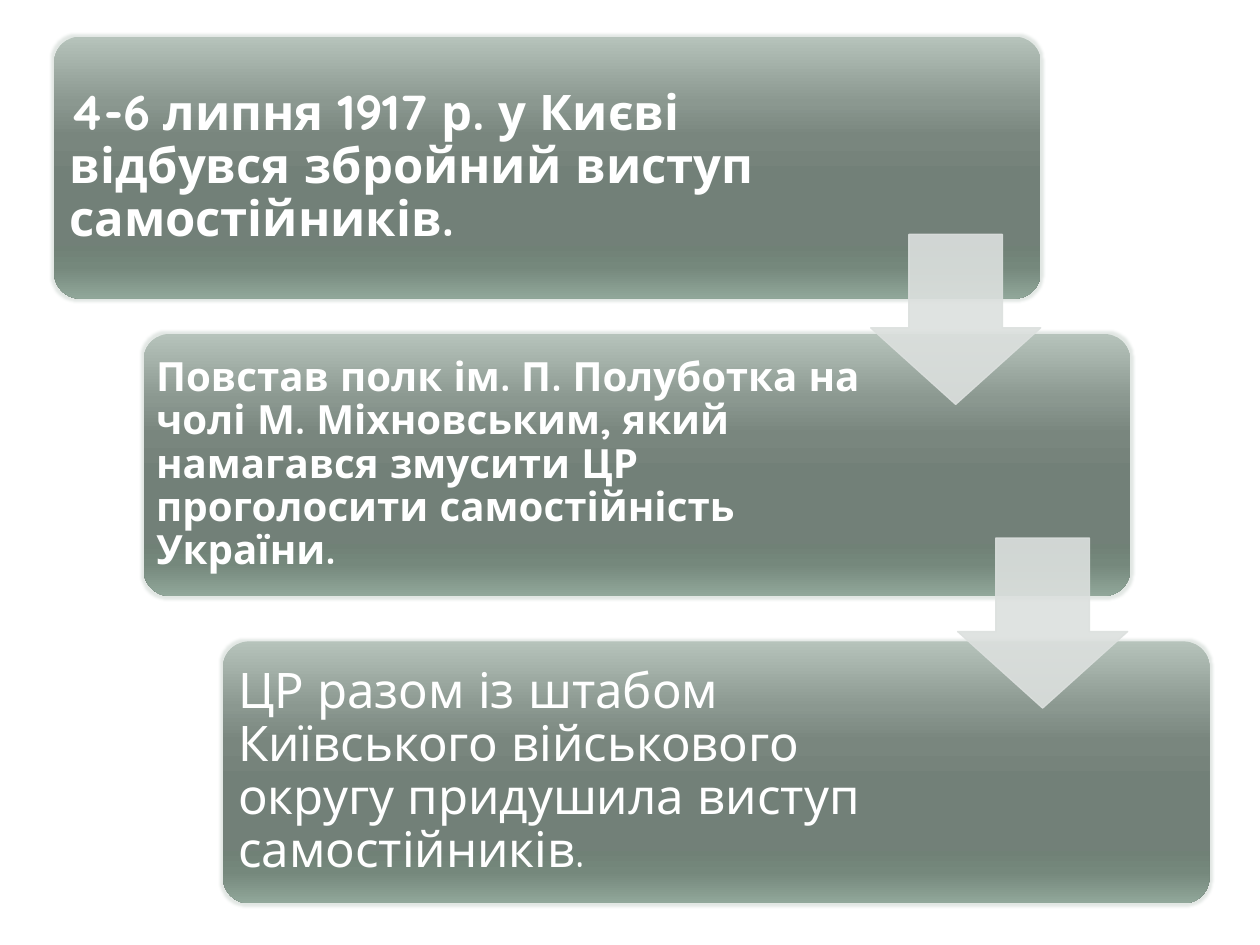
from lxml import etree
from pptx import Presentation
from pptx.dml.color import RGBColor
from pptx.enum.shapes import MSO_SHAPE
from pptx.enum.text import MSO_ANCHOR
from pptx.oxml.ns import qn
from pptx.util import Inches, Pt

ROUND, DOWN = MSO_SHAPE.ROUNDED_RECTANGLE, MSO_SHAPE.DOWN_ARROW
MIDDLE = MSO_ANCHOR.MIDDLE
FONT = "Quicksand"
COLORS = {"text": "FFFFFF", "arrow": "DCE0DE", "glow": "B6C3BB"}
STOPS = {0: "B6C3BB", 25: "8B9890", 38: "79867E", 55: "728078",
         80: "708176", 88: "75887C", 100: "91A79A"}
CARD_W, CARD_H = 7.83, 2.08
ARROW = 1.35

# left, top, text width, inset, size, bold, text
STEPS = [
    (0.43, 0.29, 5.71, 0.12, 28, True,
     "4-6 липня 1917 р. у Києві відбувся збройний виступ самостійників."),
    (1.14, 2.65, 5.79, 0.1, 23, True,
     "Повстав полк ім. П. Полуботка на чолі М. Міхновським, який "
     "намагався змусити ЦР проголосити самостійність України."),
    (1.77, 5.09, 5.79, 0.12, 28, False,
     "ЦР разом із штабом Київського військового округу придушила "
     "виступ самостійників."),
]
ARROWS = [(6.91, 1.86), (7.6, 4.27)]


def add_node(parent, tag, **attrs):
    node = etree.SubElement(parent, qn(tag))
    for key, value in attrs.items():
        node.set(key, str(value))
    return node


def add_color(parent, color, alpha=100):
    node = add_node(parent, "a:srgbClr", val=color)
    if alpha < 100:
        add_node(node, "a:alpha", val=alpha * 1000)


def add_form(slide, kind, left, top, width, height, adjust):
    form = slide.shapes.add_shape(
        kind, Inches(left), Inches(top), Inches(width), Inches(height))
    form.shadow.inherit = False
    for i, value in enumerate(adjust):
        form.adjustments[i] = value
    return form


def add_card(slide, left, top):
    """Rounded panel with a vertical gradient and a faint glow."""
    card = add_form(slide, ROUND, left, top, CARD_W, CARD_H, [0.1])
    card.line.fill.background()
    card.fill.gradient()
    card.fill.gradient_angle = 270
    props = card._element.spPr
    stops = props.find(".//" + qn("a:gsLst"))
    for old in list(stops):
        stops.remove(old)
    for pos, color in STOPS.items():
        add_color(add_node(stops, "a:gs", pos=pos * 1000), color)
    glow = add_node(props.find(qn("a:effectLst")), "a:glow", rad=Pt(3))
    add_color(glow, COLORS["glow"], 40)


def add_text(slide, text, left, top, width, height, inset, size, bold):
    box = slide.shapes.add_textbox(
        Inches(left), Inches(top), Inches(width), Inches(height))
    frame = box.text_frame
    frame.word_wrap = True
    frame.vertical_anchor = MIDDLE
    frame.margin_left = frame.margin_right = Inches(inset)
    frame.margin_top = frame.margin_bottom = Inches(inset)
    para = frame.paragraphs[0]
    para.line_spacing = 0.9
    run = para.add_run()
    run.text = text
    run.font.name = FONT
    run.font.size = Pt(size)
    run.font.bold = bold
    run.font.color.rgb = RGBColor.from_string(COLORS["text"])


def add_arrow(slide, left, top):
    arrow = add_form(slide, DOWN, left, top, ARROW, ARROW, [0.55, 0.45])
    arrow.line.width = Pt(0.75)
    for fill in (arrow.fill, arrow.line.fill):
        fill.solid()
        fill.fore_color.rgb = RGBColor.from_string(COLORS["arrow"])
    for color in arrow._element.spPr.iter(qn("a:srgbClr")):
        add_node(color, "a:alpha", val=90000)


def main():
    deck = Presentation()
    deck.slide_width, deck.slide_height = Inches(10), Inches(7.5)
    slide = deck.slides.add_slide(deck.slide_layouts[6])
    for left, top, width, inset, size, bold, text in STEPS:
        add_card(slide, left, top)
        add_text(slide, text, left, top, width, CARD_H,
                 inset=inset, size=size, bold=bold)
    for left, top in ARROWS:
        add_arrow(slide, left, top)
    deck.save("out.pptx")


if __name__ == "__main__":
    main()
